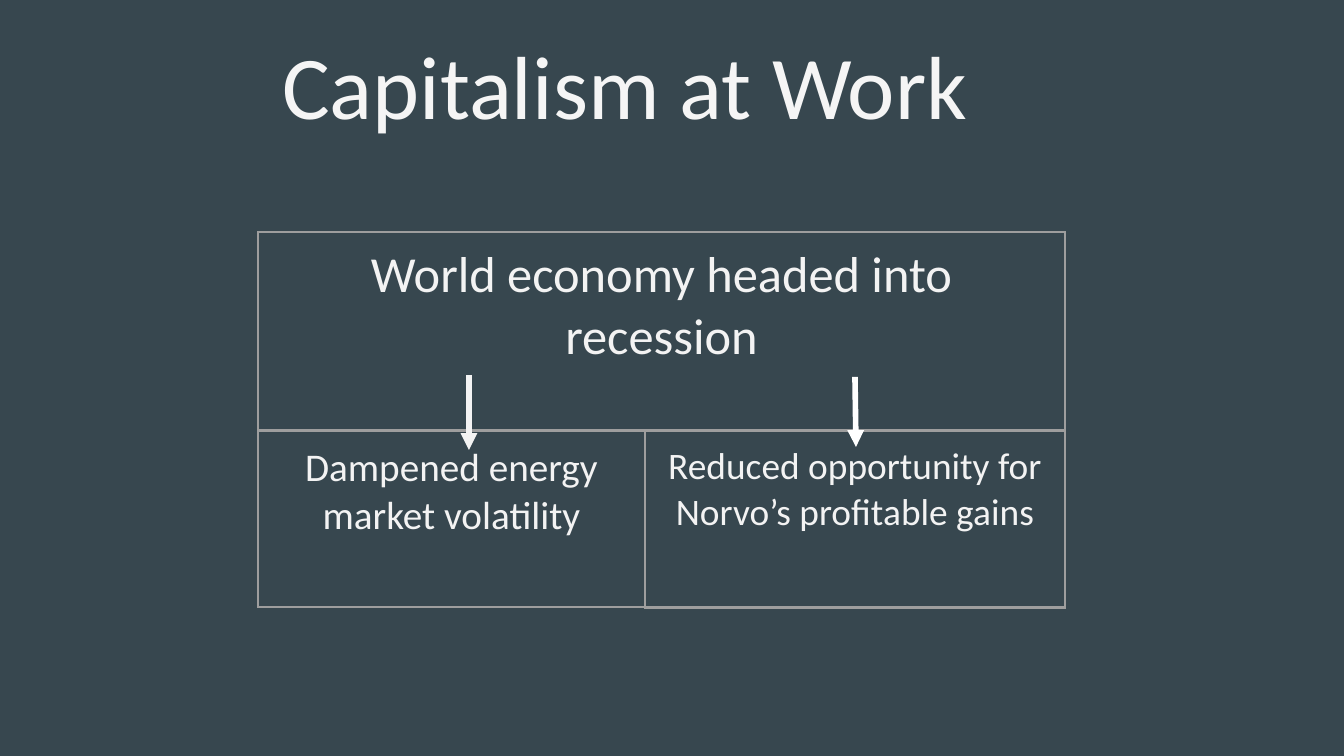
from lxml import etree
from pptx import Presentation
from pptx.dml.color import RGBColor
from pptx.enum.shapes import MSO_CONNECTOR
from pptx.enum.text import MSO_ANCHOR, MSO_AUTO_SIZE, PP_ALIGN
from pptx.oxml.ns import qn
from pptx.util import Emu, Pt

STRAIGHT = MSO_CONNECTOR.STRAIGHT
MIDDLE, TOP = MSO_ANCHOR.MIDDLE, MSO_ANCHOR.TOP
LEFT, CENTER = PP_ALIGN.LEFT, PP_ALIGN.CENTER
TITLE_ONLY = 5

THEME = {
    "font": "Calibri",
    "bg": "37474F", "title": "F5F5F5", "text": "F3F3F3", "border": "9E9E9E",
    "title_size": 48, "border_width": 0.75, "arrow_width": 3,
}
TITLE = "Capitalism at Work"
TABLES = [
    {"at": (258, 232), "width": 807, "rows": (198, 177), "size": 27,
     "text": "World economy headed into recession"},
    {"at": (258, 431), "width": 387, "rows": (176,), "size": 21,
     "text": "Dampened energy market volatility"},
    {"at": (645, 431), "width": 420, "rows": (177,), "size": 20,
     "text": "Reduced opportunity for Norvo’s profitable gains"},
]
ARROWS = [
    ((469, 375), (469, 450), "F3F3F3"),
    ((855, 377), (856, 447), "FFFFFF"),
]


def px(n):
    return Emu(round(n * 914400 / 134.4))


def color(value):
    return RGBColor.from_string(value)


def style(p, size, value, align):
    p.alignment = align
    p.font.name = THEME["font"]
    p.font.size = Pt(size)
    p.font.color.rgb = color(value)


def set_margins(box):
    box.margin_left = box.margin_right = px(13)
    box.margin_top = box.margin_bottom = px(13)


def set_borders(cell):
    tc_pr = cell._tc.get_or_add_tcPr()
    for i, side in enumerate(("lnL", "lnR", "lnT", "lnB")):
        ln = etree.Element(qn(f"a:{side}"), w=str(Pt(THEME["border_width"])))
        fill = etree.SubElement(ln, qn("a:solidFill"))
        etree.SubElement(fill, qn("a:srgbClr"), val=THEME["border"])
        tc_pr.insert(i, ln)


def add_title(slide):
    sp = slide.shapes.title
    sp.left, sp.top, sp.width, sp.height = px(0), px(27), px(1344), px(114)
    tf = sp.text_frame
    tf.text = TITLE
    tf.auto_size = MSO_AUTO_SIZE.NONE
    tf.vertical_anchor = MIDDLE
    set_margins(tf)
    p = tf.paragraphs[0]
    style(p, THEME["title_size"], THEME["title"], LEFT)
    p_pr = p._p.get_or_add_pPr()
    p_pr.set("marL", str(px(202)))
    p_pr.set("indent", str(px(67)))


def add_box(slide, at, width, rows, size, text):
    x, y = at
    table = slide.shapes.add_table(
        len(rows), 1, px(x), px(y), px(width), px(sum(rows))).table
    table.first_row = table.horz_banding = False
    for row, height in zip(table.rows, rows):
        row.height = px(height)
        cell = row.cells[0]
        cell.fill.background()
        cell.vertical_anchor = TOP
        set_margins(cell)
        set_borders(cell)
    cell = table.cell(0, 0)
    cell.text = text
    style(cell.text_frame.paragraphs[0], size, THEME["text"], CENTER)


def add_arrow(slide, start, end, value):
    line = slide.shapes.add_connector(
        STRAIGHT, *(px(n) for n in start + end))
    line.line.color.rgb = color(value)
    line.line.width = Pt(THEME["arrow_width"])
    etree.SubElement(line.line._get_or_add_ln(), qn("a:tailEnd"), type="triangle")
    etree.SubElement(line._element.spPr, qn("a:effectLst"))


def main():
    prs = Presentation()
    prs.slide_width, prs.slide_height = px(1344), px(756)
    slide = prs.slides.add_slide(prs.slide_layouts[TITLE_ONLY])
    slide.background.fill.solid()
    slide.background.fill.fore_color.rgb = color(THEME["bg"])
    add_title(slide)
    for box in TABLES:
        add_box(slide, **box)
    for arrow in ARROWS:
        add_arrow(slide, *arrow)
    prs.save("out.pptx")


if __name__ == "__main__":
    main()
